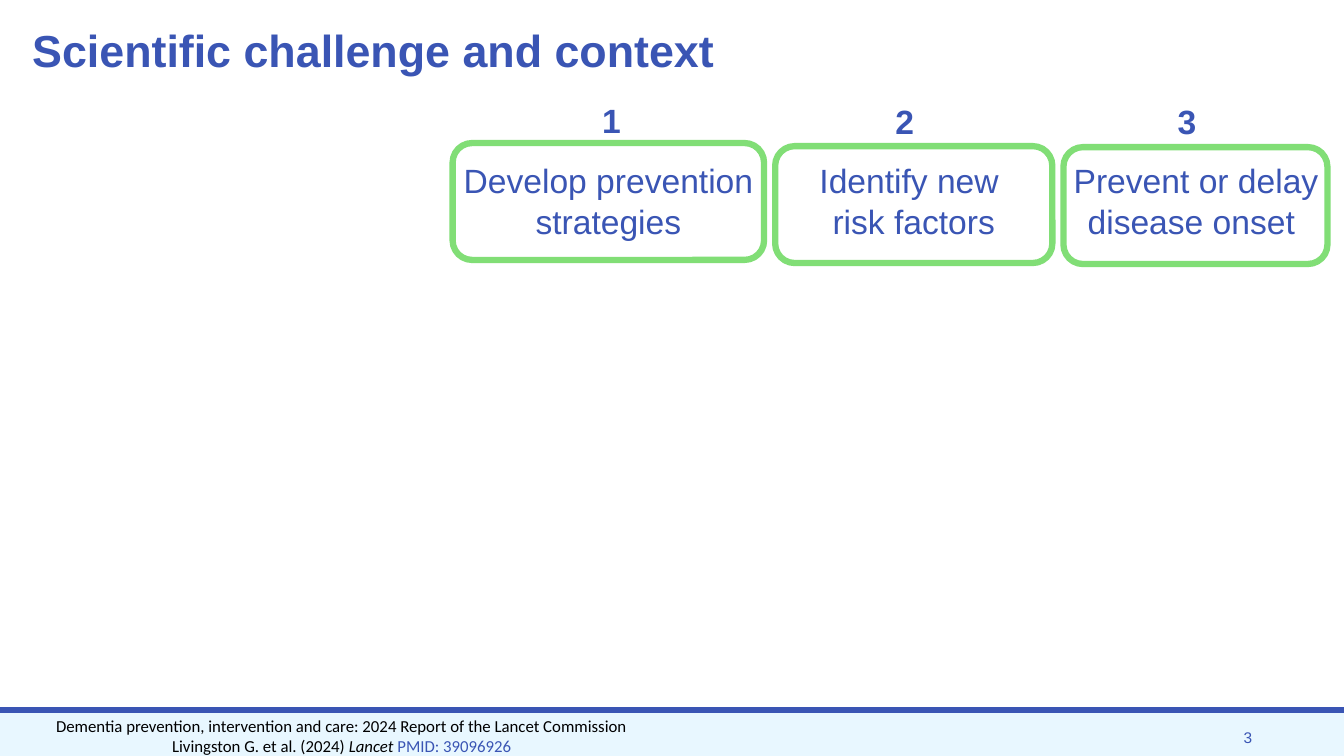
from lxml import etree
from pptx import Presentation
from pptx import util as u
from pptx.dml.color import RGBColor
from pptx.enum import shapes, text

BLUE, GREEN, PALE, BLACK = "3A55B4", "81DE76", "E8F7FF", "000000"
WIDTH, HEIGHT = 960, 540

TITLE = "Scientific challenge and context"
# Each goal: number, number centre and top, label, frame (left, top, width), label (left, width)
GOALS = [
    ("1", 436.7, 67.7, ["Develop prevention strategies"], (323.3, 102.2, 222.5), (323.3, 222.5)),
    ("2", 646.2, 68.4, ["Identify new ", "risk factors"], (553.7, 104.4, 198), (558, 189.4)),
    ("3", 847.8, 68.4, ["Prevent or delay disease onset "], (759.6, 105.1, 188.6), (759.6, 189.4)),
]
FRAME_HEIGHT, LABEL_TOP, LABEL_HEIGHT = 83.5, 110.9, 87.1
NUMBER_WIDTH, NUMBER_HEIGHT = 28, 36
# Each span: text, colour, italic
CITATION = [
    [("Dementia prevention, intervention and care: 2024 Report of the Lancet Commission", BLACK, False)],
    [("Livingston G. et al. (2024) ", BLACK, False), ("Lancet ", BLACK, True),
     ("PMID: 39096926", BLUE, False)],
]
PAGE_NUMBER = "3"


def colour(code):
    return RGBColor.from_string(code)


def points(*values):
    return [u.Pt(value) for value in values]


def add_span(para, words, size, font="Arial", code=BLUE, bold=False, italic=False):
    span = para.add_run()
    span.text = words
    span.font.name, span.font.size = font, u.Pt(size)
    span.font.bold, span.font.italic = bold, italic
    span.font.color.rgb = colour(code)


def add_box(place, align=text.PP_ALIGN.CENTER, anchor=text.MSO_ANCHOR.TOP, side=7.2):
    frame = page.shapes.add_textbox(*points(*place)).text_frame
    frame.word_wrap = True
    frame.vertical_anchor = anchor
    frame.margin_left = frame.margin_right = u.Pt(side)
    frame.paragraphs[0].alignment = align
    return frame


def add_panel(kind, place, fill=None, line=None, weight=1):
    panel = page.shapes.add_shape(kind, *points(*place))
    panel.shadow.inherit = False
    if fill:
        panel.fill.solid()
        panel.fill.fore_color.rgb = colour(fill)
    else:
        panel.fill.background()
    if line:
        panel.line.color.rgb = colour(line)
        panel.line.width = u.Pt(weight)
    else:
        panel.line.fill.background()


deck = Presentation()
deck.slide_width, deck.slide_height = points(WIDTH, HEIGHT)
page = deck.slides.add_slide(deck.slide_layouts[5])

# Footer band and rule
add_panel(shapes.MSO_SHAPE.RECTANGLE, (0, 508, WIDTH, HEIGHT - 508), fill=PALE)
add_panel(shapes.MSO_SHAPE.RECTANGLE, (0, 505.5, WIDTH, 3.5), fill=BLUE, line=BLUE)

# Title
title = page.shapes.title
title.left, title.top, title.width, title.height = points(23, 18.7, 852.5, 38.2)
frame = title.text_frame
frame.margin_left = frame.margin_top = frame.margin_right = frame.margin_bottom = 0
frame.auto_size = text.MSO_AUTO_SIZE.NONE
frame.vertical_anchor = text.MSO_ANCHOR.MIDDLE
para = frame.paragraphs[0]
para.alignment, para.line_spacing = text.PP_ALIGN.LEFT, 0.9
add_span(para, TITLE, 32, bold=True)

# Numbered goals
for number, centre, top, lines, (left, frame_top, width), (label_left, label_width) in GOALS:
    add_panel(shapes.MSO_SHAPE.ROUNDED_RECTANGLE, (left, frame_top, width, FRAME_HEIGHT),
              line=GREEN, weight=4.5)
    label = add_box((label_left, LABEL_TOP, label_width, LABEL_HEIGHT), side=5).paragraphs[0]
    for index, words in enumerate(lines):
        if index:
            label.add_line_break()
        add_span(label, words, 24)
    place = (centre - NUMBER_WIDTH / 2, top, NUMBER_WIDTH, NUMBER_HEIGHT)
    add_span(add_box(place, side=0).paragraphs[0], number, 24, bold=True)

# Citation and page number
citation = add_box((0, 507.6, 488.2, 32.4))
for index, spans in enumerate(CITATION):
    para = citation.add_paragraph() if index else citation.paragraphs[0]
    para.alignment = text.PP_ALIGN.CENTER
    for words, code, italic in spans:
        add_span(para, words, 12, "Calibri", code, italic=italic)
corner = add_box((697, 516.2, 204.5, 21.6), text.PP_ALIGN.RIGHT, text.MSO_ANCHOR.MIDDLE)
add_span(corner.paragraphs[0], PAGE_NUMBER, 11)

deck.save("out.pptx")
